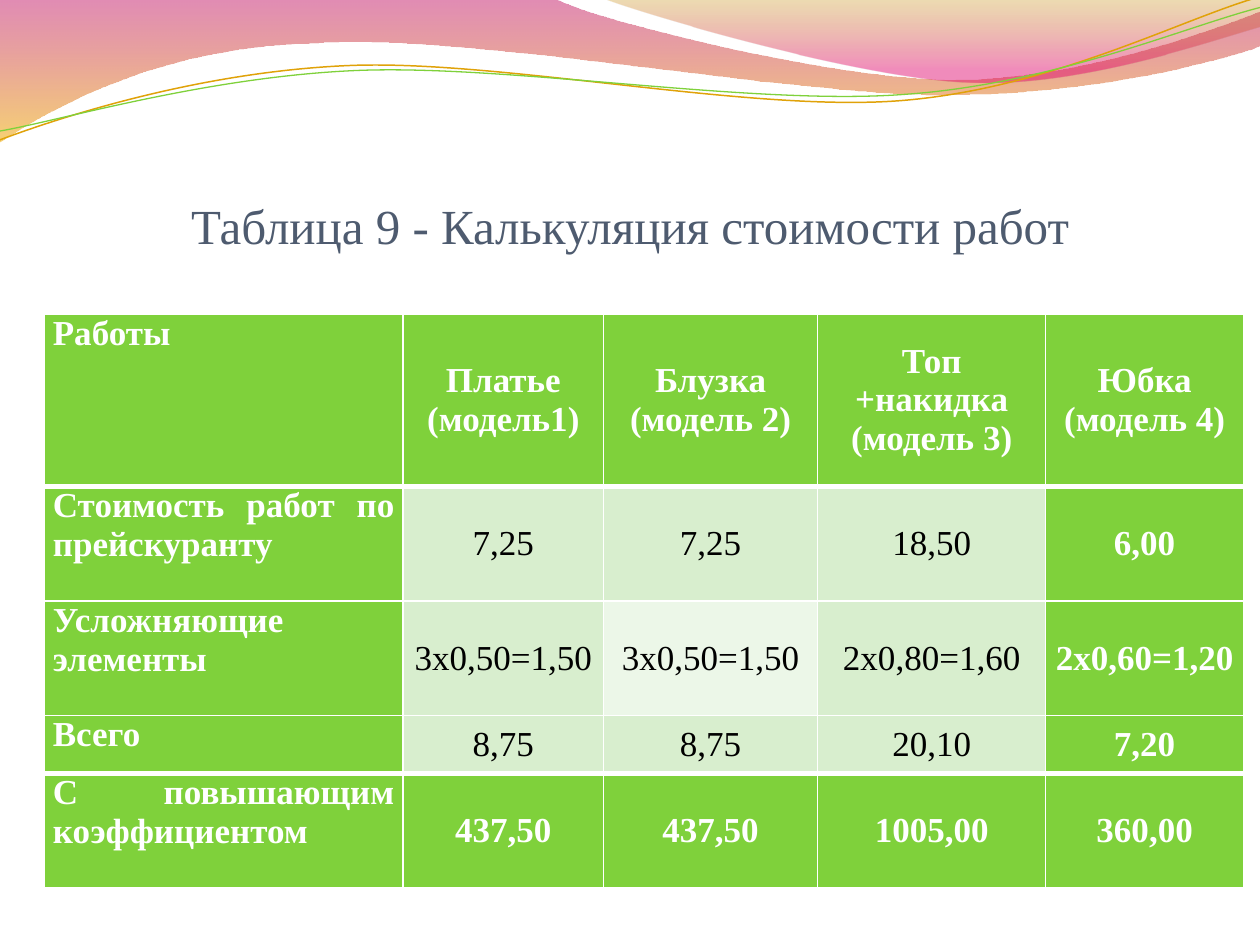
"""Builds a slide with a cost table under a wavy band."""
from math import cos, radians, sin

from pptx import Presentation
from pptx.dml.color import RGBColor
from pptx.enum.text import MSO_ANCHOR, PP_ALIGN
from pptx.oxml import parse_xml
from pptx.util import Inches, Pt

MIDDLE, TOP, BOTTOM = MSO_ANCHOR.MIDDLE, MSO_ANCHOR.TOP, MSO_ANCHOR.BOTTOM
CENTER, JUSTIFY = PP_ALIGN.CENTER, PP_ALIGN.JUSTIFY
NS = 'xmlns:a="http://schemas.openxmlformats.org/drawingml/2006/main"'
FONT = "Times New Roman"
GREEN, PALE, LIGHT = "7FD13B", "D8EECE", "ECF7E8"
TILT = 2.7


def color(code):
    """Turn a hex string into a colour."""
    return RGBColor.from_string(code)


def wave(shapes, start, parts, close):
    """Draw an outline from line ends (1 point) and curves (3 points)."""
    dots = [dot for part in parts for dot in part]
    pen = shapes.build_freeform(Inches(start[0]), Inches(start[1]))
    pen.add_line_segments([(Inches(x), Inches(y)) for x, y in dots], close=close)
    shape = pen.convert_to_shape()
    shape.shadow.inherit = False
    shape.fill.background()
    lines = iter(shape._element.findall(".//{*}lnTo"))
    for part in parts:
        group = [next(lines) for _ in part]
        if len(group) == 3:
            curve = parse_xml(f"<a:cubicBezTo {NS}/>")
            group[0].addprevious(curve)
            for line in group:
                curve.append(line[0])
                line.getparent().remove(line)
    return shape


deck = Presentation()
deck.slide_width, deck.slide_height = Inches(10), Inches(7.5)
slide = deck.slides.add_slide(deck.slide_layouts[5])
shapes = slide.shapes

bands = [
    ((0, 0), [[(4.4, -0.01)],
              [(4.76, 0.17), (6.64, 0.63), (7.58, 0.63)],
              [(8.53, 0.63), (9.58, 0.26), (10, 0.09)],
              [(10.01, 0.36)],
              [(9.83, 0.44), (8.7, 0.76), (7.46, 0.75)],
              [(6.22, 0.75), (3.82, 0.28), (2.57, 0.34)],
              [(1.29, 0.36), (0.46, 0.83), (-0.01, 1.13)],
              [(0, 0)]],
     [(0, "BD0059", 45), (100, "F0AB00", 55)]),
    ((4.79, -0.01), [[(5.09, 0.11), (6.82, 0.62), (7.69, 0.65)],
                     [(8.56, 0.69), (9.61, 0.32), (10, 0.21)],
                     [(10, 0)],
                     [(4.79, -0.01)]],
     [(0, "C38B00", 30), (80, "E1006B", 45)]),
]
for start, parts, stops in bands:
    band = wave(shapes, start, parts, True)
    band.line.fill.background()
    marks = "".join(
        f'<a:gs pos="{pos * 1000}"><a:srgbClr val="{code}">'
        f'<a:alpha val="{alpha * 1000}"/></a:srgbClr></a:gs>'
        for pos, code, alpha in stops)
    props = band._element.spPr
    props.replace(props.find("{*}noFill"), parse_xml(
        f'<a:gradFill {NS} rotWithShape="1"><a:gsLst>{marks}</a:gsLst>'
        '<a:lin ang="5400000" scaled="0"/></a:gradFill>'))

threads = [
    ("E0A209", 0.85, (4.99, 0.57),
     [(0, 1.11), (0.48, 0.93), (1.58, 0.57), (2.77, 0.52), (3.95, 0.47), (5.93, 0.89),
      (7.13, 0.8), (8.33, 0.71), (9.38, 0.15), (9.98, -0.02)]),
    (GREEN, 0.75, (5, 0.59),
     [(0, 1.04), (0.47, 0.96), (1.64, 0.61), (2.83, 0.56), (4.03, 0.51), (5.97, 0.84),
      (7.17, 0.75), (8.36, 0.67), (9.41, 0.21), (10, 0.06)]),
]
si, co = sin(radians(TILT)), cos(radians(TILT))
for code, width, (mx, my), dots in threads:
    flat = [(mx + (x - mx) * co - (y - my) * si, my + (x - mx) * si + (y - my) * co)
            for x, y in dots]
    thread = wave(shapes, flat[0], [flat[i:i + 3] for i in (1, 4, 7)], False)
    thread.rotation = 360 - TILT
    thread.line.color.rgb = color(code)
    thread.line.width = Pt(width)

title = shapes.title
title.left, title.top, title.width, title.height = map(Inches, (0.5, 0.77, 9, 1.25))
frame = title.text_frame
frame.text = "Таблица 9 - Калькуляция стоимости работ"
frame.vertical_anchor = BOTTOM
frame.margin_left = frame.margin_right = frame.margin_bottom = 0
frame.margin_top = Inches(0.05)
para = frame.paragraphs[0]
para.alignment = CENTER
para.font.name, para.font.size = FONT, Pt(28)
para.font.color.rgb = color("4E5B6F")
shapes._spTree.append(title._element)

rows = [
    ["Работы", "Платье (модель1)", "Блузка\n(модель 2)", "Топ +накидка\n(модель 3)",
     "Юбка\n(модель 4)"],
    ["Стоимость работ по прейскуранту", "7,25", "7,25", "18,50", "6,00"],
    ["Усложняющие элементы", "3х0,50=1,50", "3х0,50=1,50", "2х0,80=1,60", "2х0,60=1,20"],
    ["Всего", "8,75", "8,75", "20,10", "7,20"],
    ["С повышающим коэффициентом", "437,50", "437,50", "1005,00", "360,00"],
]
widths = [2.85, 1.59, 1.7, 1.81, 1.57]
heights = [1.37, 0.91, 0.91, 0.46, 0.91]
last = len(rows) - 1
table = shapes.add_table(len(rows), len(widths), Inches(0.35), Inches(2.49),
                         Inches(sum(widths)), Inches(sum(heights))).table
for column, width in zip(table.columns, widths):
    column.width = Inches(width)
for row, height in zip(table.rows, heights):
    row.height = Inches(height)

for r, row in enumerate(rows):
    for c, text in enumerate(row):
        cell = table.cell(r, c)
        cell.text = text
        cell.margin_left = cell.margin_right = Inches(0.07)
        cell.margin_top = cell.margin_bottom = 0
        cell.vertical_anchor = MIDDLE if c else TOP
        strong = r in (0, last) or c in (0, 4)
        for para in cell.text_frame.paragraphs:
            para.alignment = CENTER if c else JUSTIFY
            para.font.name, para.font.size = FONT, Pt(20)
            para.font.bold = strong
            para.font.color.rgb = color("FFFFFF" if strong else "000000")
        props = cell._tc.get_or_add_tcPr()
        edges = {"L": 1, "R": 1, "T": 3 if r in (1, last) else 1,
                 "B": 3 if r in (0, last - 1) else 1}
        for side, width in edges.items():
            props.append(parse_xml(
                f'<a:ln{side} {NS} w="{Pt(width)}"><a:solidFill>'
                f'<a:srgbClr val="FFFFFF"/></a:solidFill></a:ln{side}>'))
        cell.fill.solid()
        cell.fill.fore_color.rgb = color(
            GREEN if strong else LIGHT if (r, c) == (2, 2) else PALE)

deck.save("out.pptx")
